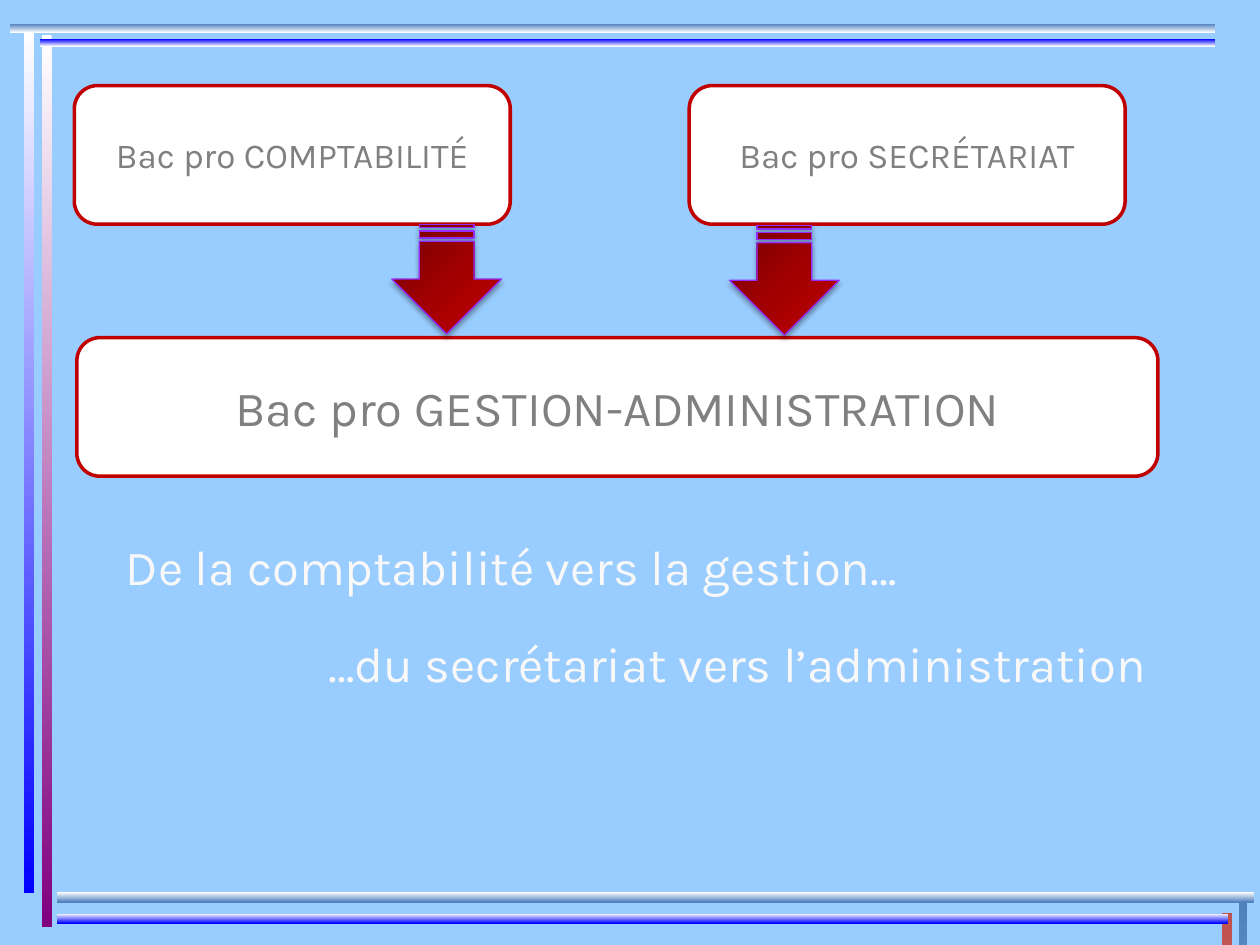
from copy import deepcopy

from lxml import etree
from pptx import Presentation
from pptx.dml.color import RGBColor
from pptx.enum.shapes import MSO_SHAPE
from pptx.enum.text import MSO_ANCHOR, PP_ALIGN
from pptx.oxml.ns import qn
from pptx.util import Inches, Pt

RECTANGLE = MSO_SHAPE.RECTANGLE
ROUNDED = MSO_SHAPE.ROUNDED_RECTANGLE
STRIPED_ARROW = MSO_SHAPE.STRIPED_RIGHT_ARROW
LEFT, CENTER, RIGHT = PP_ALIGN.LEFT, PP_ALIGN.CENTER, PP_ALIGN.RIGHT
MIDDLE = MSO_ANCHOR.MIDDLE

FONT = "Karla"
WHITE, BLUE, STEEL, RED = "FFFFFF", "0000FF", "4F81BD", "C0504D"
BORDER, GREY, PALE = "C00000", "808080", "F8F8F8"

FRAME_BARS = [
    (0.33, 0.28, 0.08, 7.08, WHITE, "800080"),
    (0.19, 0.25, 0.08, 6.84, WHITE, BLUE),
    (9.83, 7.17, 0.07, 6.92, STEEL, WHITE),
    (9.7, 7.25, 0.08, 6.83, RED, WHITE),
    (0.45, 7.08, 9.5, 0.08, WHITE, STEEL),
    (0.45, 7.25, 9.3, 0.08, WHITE, BLUE),
    (0.32, 0.31, 9.32, 0.06, BLUE, WHITE),
    (0.08, 0.19, 9.56, 0.07, STEEL, WHITE),
]
DIPLOMAS = [
    (0.59, 0.68, 3.46, "Bac pro COMPTABILITÉ", 20),
    (5.47, 0.68, 3.46, "Bac pro SECRÉTARIAT", 20),
    (0.61, 2.68, 8.58, "Bac pro GESTION-ADMINISTRATION", 28),
]
ARROWS = [(3.11, 1.78), (5.79, 1.79)]


def color(hex_value):
    """Turn a hex string into a colour."""
    return RGBColor.from_string(hex_value)


def add_shape(slide, kind, left, top, width, height):
    """Add a preset shape without a shadow."""
    shape = slide.shapes.add_shape(
        kind, Inches(left), Inches(top), Inches(width), Inches(height))
    shape.shadow.inherit = False
    return shape


def set_gradient(shape, colors, angle):
    """Fill with evenly spaced colours along a clockwise angle."""
    shape.fill.gradient()
    shape.fill.gradient_angle = -angle % 360
    first = shape.fill._fill._gradFill.find(qn("a:gsLst"))[0]
    for _ in colors[2:]:
        first.addnext(deepcopy(first))
    for index, (stop, value) in enumerate(zip(shape.fill.gradient_stops, colors)):
        stop.position = index / (len(colors) - 1)
        stop.color.rgb = color(value)


def set_line(shape, value, width):
    """Give the outline a colour and a width."""
    shape.line.color.rgb = color(value)
    shape.line.width = Pt(width)


def write(paragraph, text, size, value, align=LEFT, before=0):
    """Write formatted text into a paragraph."""
    paragraph.alignment = align
    paragraph.space_before = Pt(before)
    run = paragraph.add_run()
    run.text = text
    run.font.name = FONT
    run.font.size = Pt(size)
    run.font.color.rgb = color(value)


def add_bar(slide, left, top, width, height, upper, lower):
    """Add one bar of the frame, shaded from top to bottom."""
    bar = add_shape(slide, RECTANGLE, left, top, width, height)
    set_gradient(bar, [upper, lower], 90)
    bar.line.fill.background()


def add_diploma(slide, left, top, width, name, size):
    """Add a rounded box that names a diploma."""
    box = add_shape(slide, ROUNDED, left, top, width, 1.1)
    box.fill.solid()
    box.fill.fore_color.rgb = color(WHITE)
    set_line(box, BORDER, 2)
    box.text_frame.word_wrap = True
    box.text_frame.vertical_anchor = MIDDLE
    write(box.text_frame.paragraphs[0], name, size, GREY, align=CENTER)


def add_arrow(slide, left, top):
    """Add a striped arrow that points down and casts a soft shadow."""
    arrow = add_shape(slide, STRIPED_ARROW, left, top, 0.87, 0.87)
    arrow.rotation = 90
    set_gradient(arrow, ["710000", "A10000", "BF0000"], 315)
    set_line(arrow, "952CFE", 0.75)
    effects = arrow._element.spPr.find(qn("a:effectLst"))
    shadow = etree.SubElement(
        effects, qn("a:outerShdw"), blurRad=str(Pt(3.1)), dist=str(Pt(1.8)),
        dir="5400000", rotWithShape="0")
    black = etree.SubElement(shadow, qn("a:srgbClr"), val="000000")
    etree.SubElement(black, qn("a:alpha"), val="35000")


def add_motto(slide):
    """Add the two-line motto below the boxes."""
    motto = slide.shapes.add_textbox(
        Inches(0.9), Inches(4.21), Inches(8.29), Inches(1.5)).text_frame
    motto.word_wrap = True
    write(motto.paragraphs[0], "De la comptabilité vers la gestion…", 28, PALE)
    write(motto.add_paragraph(), "…du secrétariat vers l’administration", 28, PALE,
          align=RIGHT, before=22)


def main():
    """Build the slide and save it."""
    deck = Presentation()
    deck.slide_width, deck.slide_height = Inches(10), Inches(7.5)
    slide = deck.slides.add_slide(deck.slide_layouts[6])
    slide.background.fill.solid()
    slide.background.fill.fore_color.rgb = color("99CCFF")
    for bar in FRAME_BARS:
        add_bar(slide, *bar)
    for diploma in DIPLOMAS:
        add_diploma(slide, *diploma)
    add_motto(slide)
    for arrow in ARROWS:
        add_arrow(slide, *arrow)
    deck.save("out.pptx")


if __name__ == "__main__":
    main()
